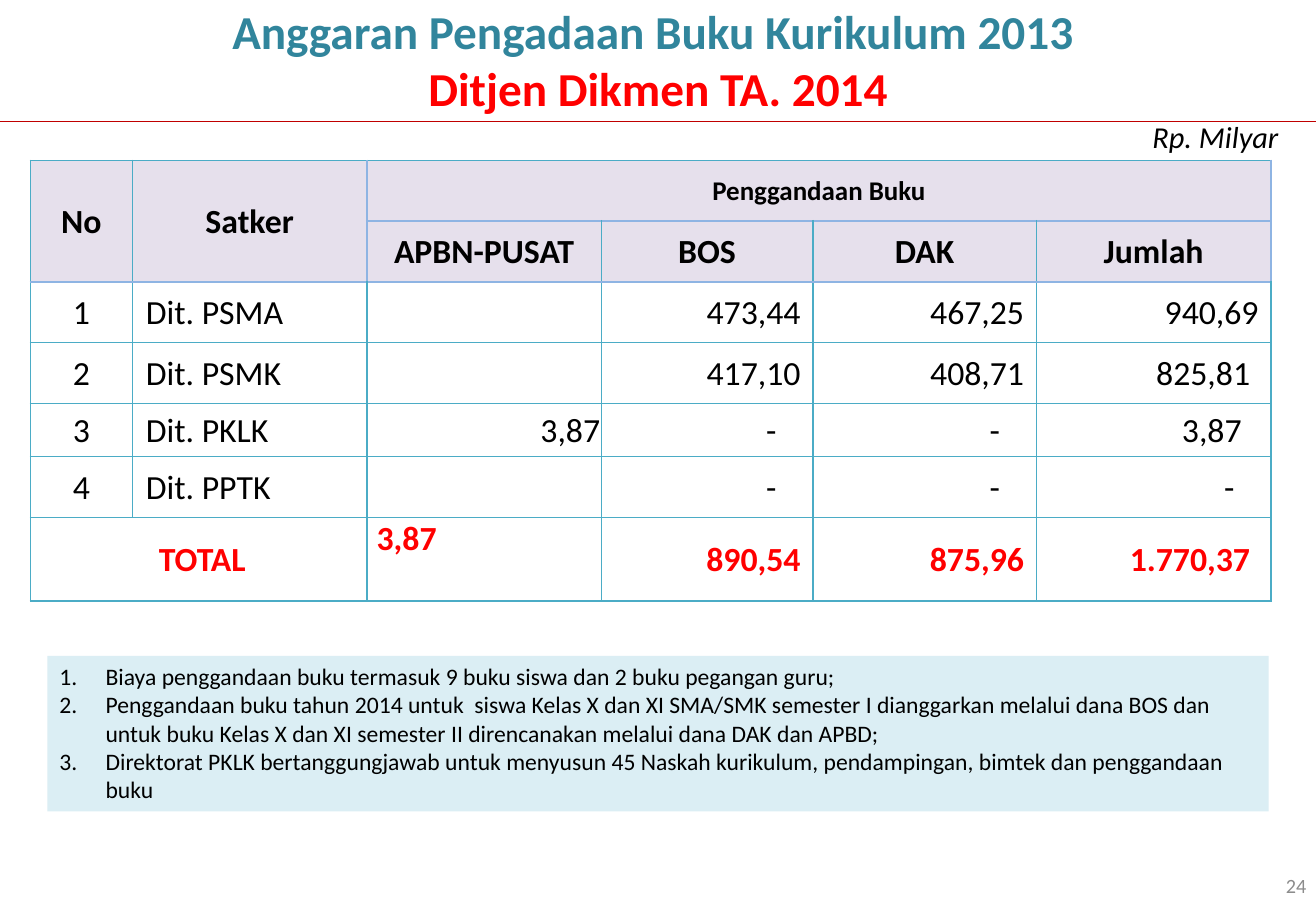
from pptx import Presentation
from pptx.dml.color import RGBColor
from pptx.enum.shapes import MSO_CONNECTOR, MSO_SHAPE
from pptx.enum.text import MSO_ANCHOR, PP_ALIGN
from pptx.oxml.ns import qn
from lxml.etree import SubElement

PX = 9144
TEAL, BLUE, RED, BLACK = "4BACC6", "8EB4E3", "FF0000", "000000"
LEFT, MID, RIGHT = PP_ALIGN.LEFT, PP_ALIGN.CENTER, PP_ALIGN.RIGHT


def paint(code):
    return RGBColor.from_string(code)


def write(frame, lines, align, size, **style):
    frame.word_wrap = True
    for i, (text, hue) in enumerate(lines):
        para = frame.paragraphs[0] if i == 0 else frame.add_paragraph()
        para.alignment = align
        run = para.add_run()
        run.text = text
        run.font.color.rgb = paint(hue)
        form = {"name": "Calibri", "size": size * 12700, **style}
        for key, val in form.items():
            setattr(run.font, key, val)


deck = Presentation()
deck.slide_width, deck.slide_height = 1083 * PX, 750 * PX
slide = deck.slides.add_slide(deck.slide_layouts[6])
shapes = slide.shapes

widths = [84, 193, 193, 174, 184, 193]
heights = [50, 50, 50, 50, 44, 50, 69]
rows = [
    ["No", "Satker", "Penggandaan Buku", "", "", ""],
    ["", "", "APBN-PUSAT", "BOS", "DAK", "Jumlah"],
    ["1", "Dit. PSMA", "", "473,44", "467,25", "940,69"],
    ["2", "Dit. PSMK", "", "417,10", "408,71", "825,81"],
    ["3", "Dit. PKLK", "3,87", "-", "-", "3,87"],
    ["4", "Dit. PPTK", "", "-", "-", "-"],
    ["TOTAL", "", "3,87", "890,54", "875,96", "1.770,37"],
]
insets = {(3, 5): 17, (4, 2): 1, (4, 5): 24, (6, 5): 17}

frame = shapes.add_table(7, 6, 25 * PX, 132 * PX, sum(widths) * PX, sum(heights) * PX)
table = frame.table
table.horz_banding = table.first_row = False
for col, width in zip(table.columns, widths):
    col.width = width * PX
for row, height in zip(table.rows, heights):
    row.height = height * PX
for top, left, end, side in [(0, 0, 1, 0), (0, 1, 1, 1), (0, 2, 0, 5), (6, 0, 6, 1)]:
    table.cell(top, left).merge(table.cell(end, side))

for r, texts in enumerate(rows):
    for c, text in enumerate(texts):
        cell = table.cell(r, c)
        head, total = r < 2, r == 6
        if not cell.is_spanned:
            down = r + (cell.span_height if cell.is_merge_origin else 1)
            over = c + (cell.span_width if cell.is_merge_origin else 1)
            edges = {
                "lnL": head and c == 2,
                "lnR": head and over in (2, 6),
                "lnT": r == 2 or (r == 1 and c > 1),
                "lnB": down == 2 or (down == 1 and c > 1),
            }
            props = cell._tc.get_or_add_tcPr()
            for tag, bold in edges.items():
                line = SubElement(props, qn("a:" + tag), w="19050" if bold else "12700")
                fill = SubElement(line, qn("a:solidFill"))
                SubElement(fill, qn("a:srgbClr"), val=BLUE if bold else TEAL)
        if head:
            cell.fill.solid()
            cell.fill.fore_color.rgb = paint("E6E0EC")
        else:
            cell.fill.background()
        if not text:
            continue
        label = head or c < 2
        inset = 30 if text == "-" else insets.get((r, c), 11 if label else 10)
        form = {
            "vertical_anchor": MSO_ANCHOR.MIDDLE,
            "margin_left": (11 if label else 1) * PX,
            "margin_right": inset * PX,
            "margin_top": PX,
            "margin_bottom": 0,
        }
        align = MID if head or c == 0 else LEFT if c == 1 else RIGHT
        if total and c == 0:
            form["margin_left"] = 17 * PX
        if total and c == 2:
            align = LEFT
            form.update(vertical_anchor=MSO_ANCHOR.TOP, margin_left=8 * PX)
        for key, val in form.items():
            setattr(cell, key, val)
        size = 16 if (r, c) == (0, 2) else 20
        hue = RED if total else BLACK
        write(cell.text_frame, [(text, hue)], align, size, bold=head or total)

title = [("Anggaran Pengadaan Buku Kurikulum 2013 ", "31859C"), ("Ditjen Dikmen TA. 2014", RED)]
labels = [
    ((0, -3, 1083, 104), title, MID, 28, {"bold": True}),
    ((818, 92, 244, 40), [("Rp. Milyar", BLACK)], RIGHT, 18, {"italic": True}),
    ((832, 714, 253, 30), [("24", "8C8C8C")], RIGHT, 12, {}),
]
for place, lines, align, size, style in labels:
    box = shapes.add_textbox(*[n * PX for n in place])
    box.text_frame.vertical_anchor = MSO_ANCHOR.TOP if size > 12 else MSO_ANCHOR.MIDDLE
    write(box.text_frame, lines, align, size, **style)

rule = shapes.add_connector(MSO_CONNECTOR.STRAIGHT, 0, 100 * PX, 1083 * PX, 100 * PX)
rule.line.color.rgb = paint("C00000")
rule.line.width = 9525
SubElement(rule._element.spPr, qn("a:effectLst"))

notes = [
    "Biaya penggandaan buku termasuk 9 buku siswa dan 2 buku pegangan guru;",
    "Penggandaan buku tahun 2014 untuk  siswa Kelas X dan XI SMA/SMK semester I dianggarkan melalui dana BOS dan untuk buku Kelas X dan XI semester II direncanakan melalui dana DAK dan APBD;",
    "Direktorat PKLK bertanggungjawab untuk menyusun 45 Naskah kurikulum, pendampingan, bimtek dan penggandaan buku",
]
panel = shapes.add_shape(MSO_SHAPE.RECTANGLE, *[n * PX for n in (39, 540, 1005, 128)])
panel.shadow.inherit = False
panel.fill.solid()
panel.fill.fore_color.rgb = paint("DBEEF4")
panel.line.fill.background()
panel.text_frame.vertical_anchor = MSO_ANCHOR.TOP
write(panel.text_frame, [(note, BLACK) for note in notes], LEFT, 14)
for para in panel.text_frame.paragraphs:
    props = para._p.get_or_add_pPr()
    props.set("marL", str(38 * PX))
    props.set("indent", str(-38 * PX))
    SubElement(props, qn("a:buAutoNum"), type="arabicPeriod")

deck.save("out.pptx")
